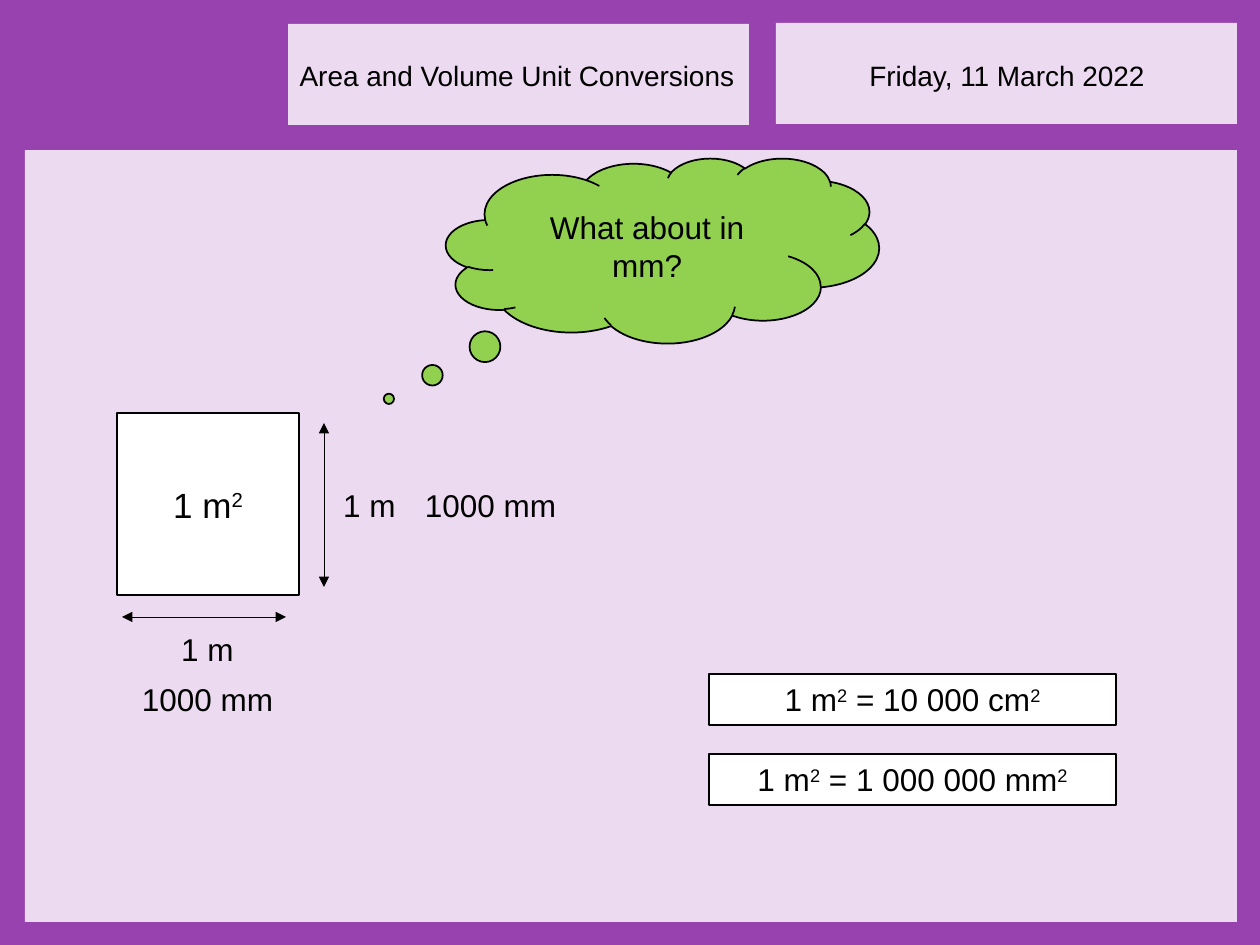
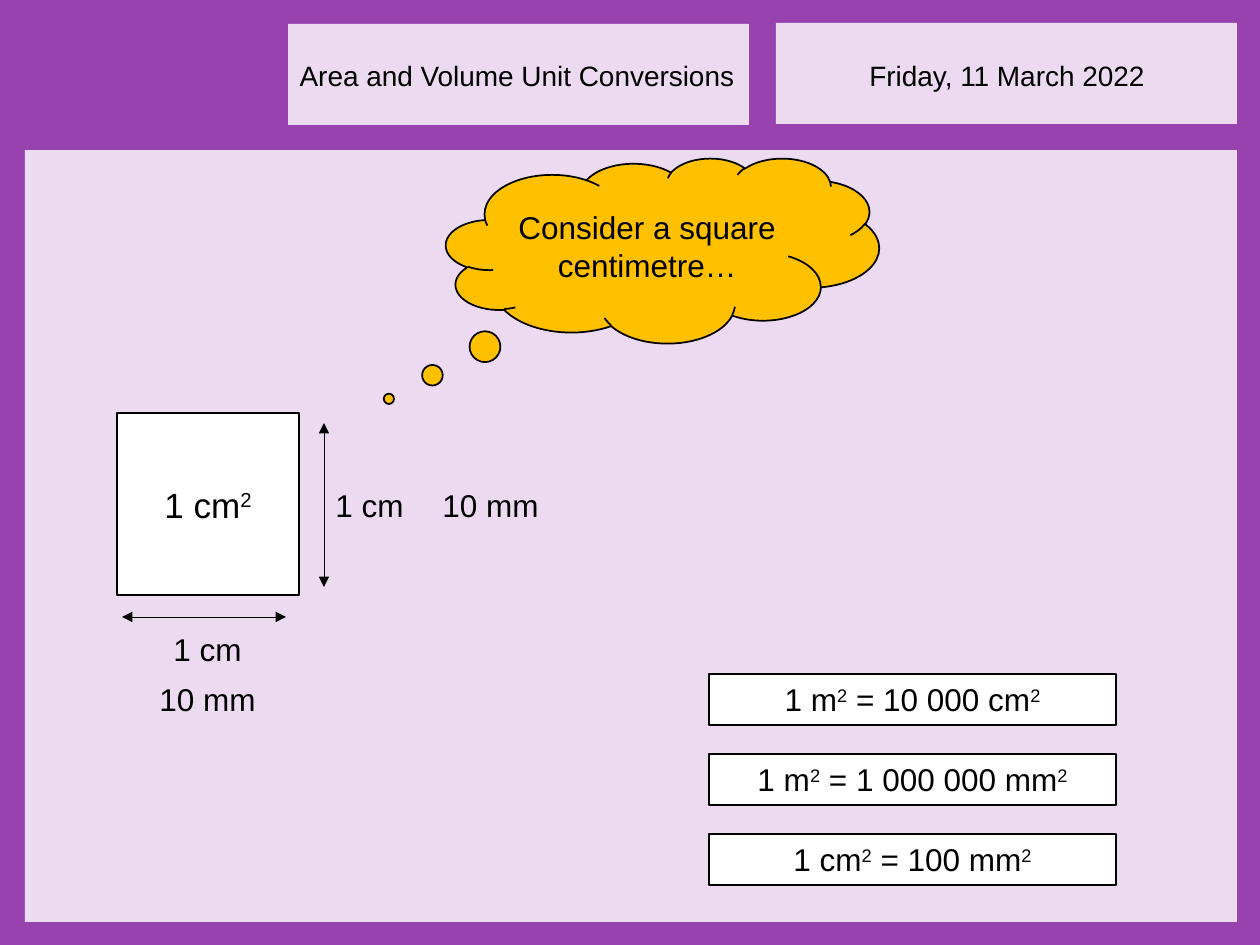
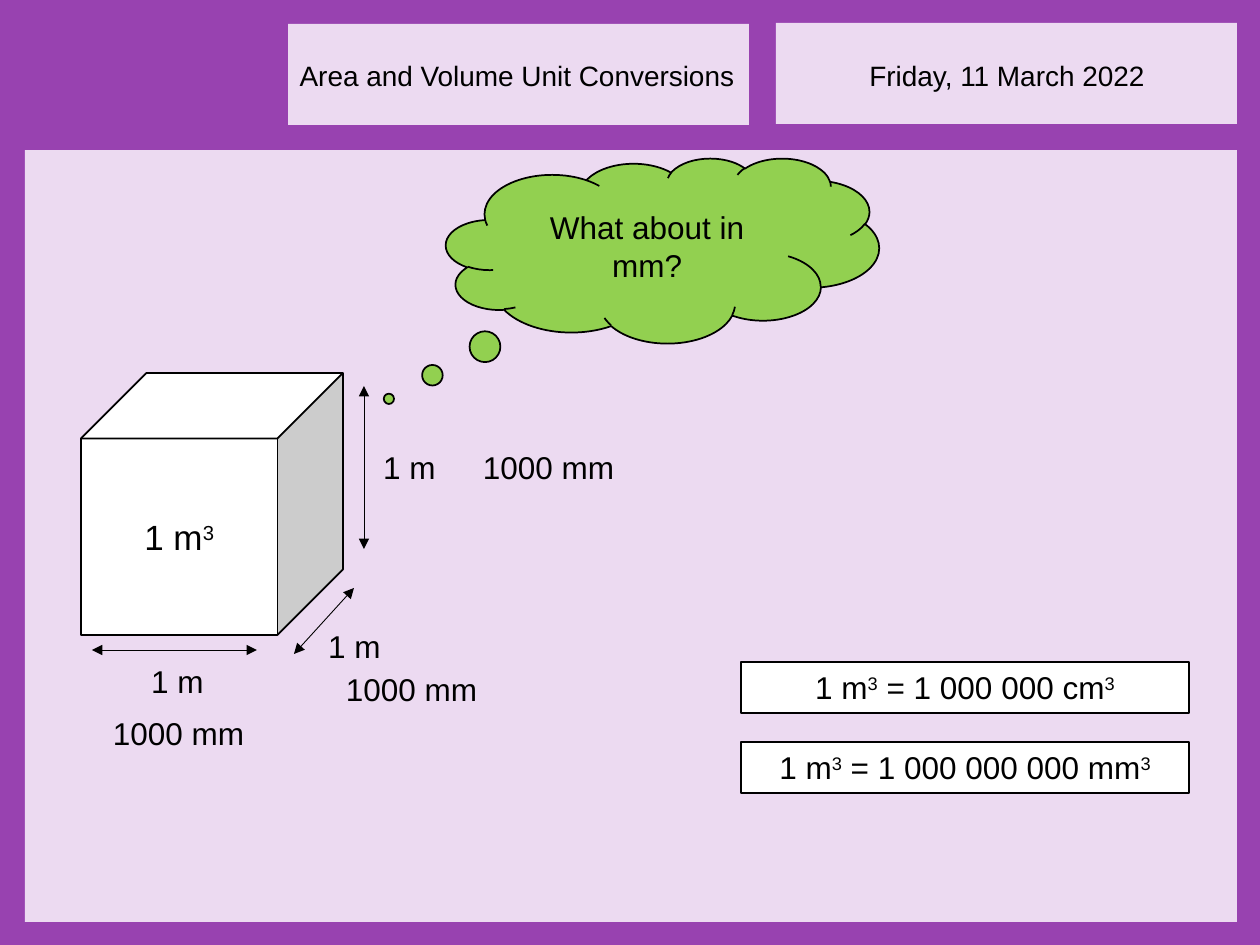
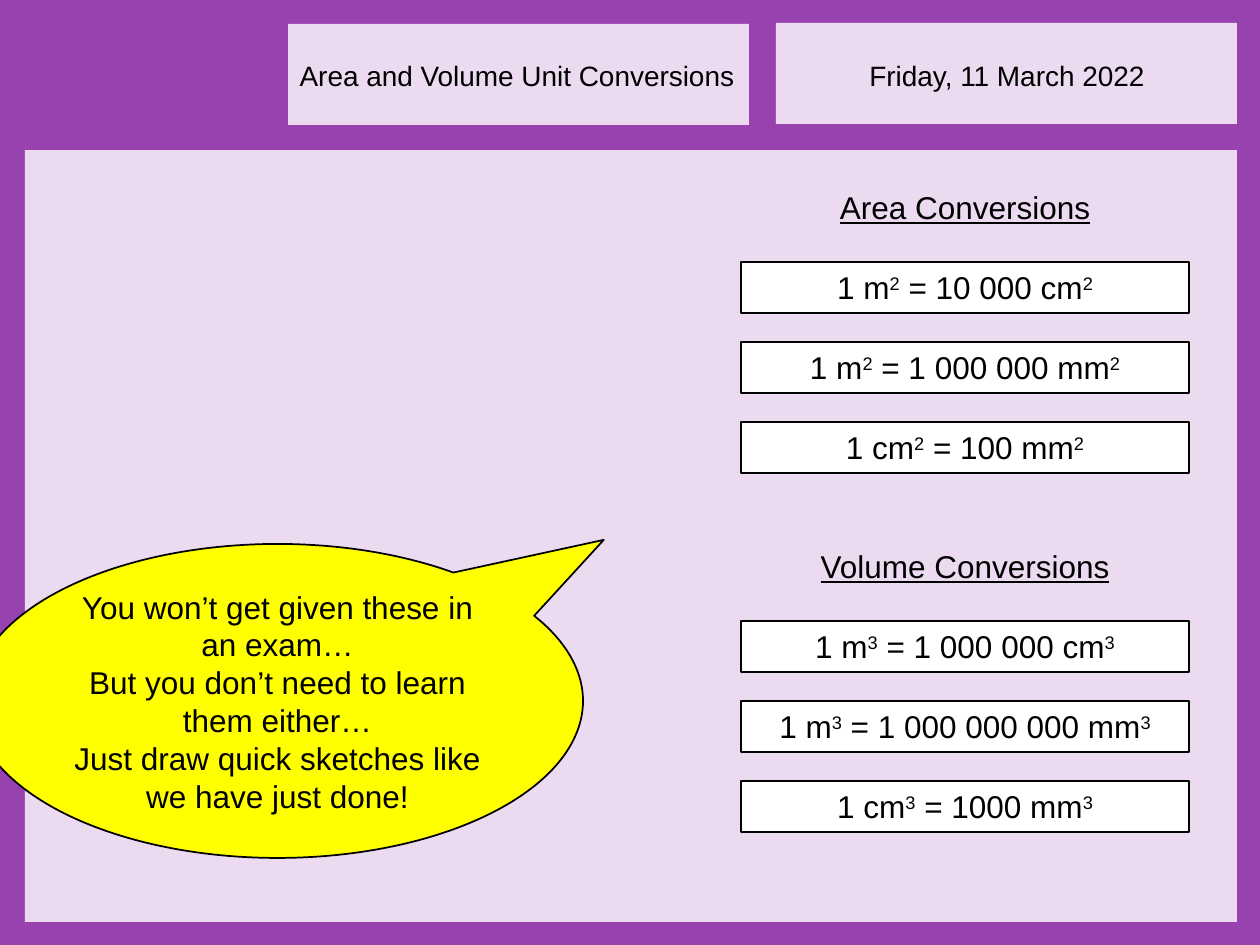
import pptx
import pptx.util
import pptx.dml.color
import pptx.enum.shapes
import pptx.enum.text
import pptx.oxml.ns
from lxml import etree

RGBColor = pptx.dml.color.RGBColor
MSO_SHAPE = pptx.enum.shapes.MSO_SHAPE
ANCHOR = pptx.enum.text.MSO_ANCHOR
qn = pptx.oxml.ns.qn

PURPLE = RGBColor(0x98, 0x42, 0xB0)
LILAC = RGBColor(0xEC, 0xDA, 0xF1)
GREEN = RGBColor(0x92, 0xD0, 0x50)
AMBER = RGBColor(0xFF, 0xC0, 0x00)
YELLOW = RGBColor(0xFF, 0xFF, 0x00)
WHITE = RGBColor(0xFF, 0xFF, 0xFF)
BLACK = RGBColor(0x00, 0x00, 0x00)

FONT = "Arial"
PX_PER_INCH = 126
SLIDE_SIZE = (1260, 945)

# A caret marks the next digit as a superscript.
AREA_FACTS = ["1 m^2 = 10 000 cm^2", "1 m^2 = 1 000 000 mm^2", "1 cm^2 = 100 mm^2"]
VOLUME_FACTS = ["1 m^3 = 1 000 000 cm^3", "1 m^3 = 1 000 000 000 mm^3", "1 cm^3 = 1000 mm^3"]

HEADERS = [
    ("Friday, 11 March 2022", (776, 23, 461, 101), (776, 52, 462, 47)),
    ("Area and Volume Unit Conversions", (288, 24, 461, 101), (286, 52, 462, 47)),
]
BODY_PANEL = (25, 150, 1212, 772)
CLOUD = (446, 158, 433, 185)
FACT_HEIGHT, FACT_STEP = 51, 80

# Each edge: arrow ends, label corner, corner of the label in mm.
SQUARE = {
    "kind": MSO_SHAPE.RECTANGLE, "box": (117, 413, 182, 182), "mm_width": 161,
    "edges": [((122, 617, 286, 617), (137, 624), (127, 674)),
              ((324, 423, 324, 587), (299, 480), (410, 480))],
}
CUBE = {
    "kind": MSO_SHAPE.CUBE, "box": (81, 373, 262, 262), "mm_width": 175,
    "edges": [((92, 650, 257, 650), (107, 656), (91, 708)),
              ((354, 588, 294, 654), (284, 621), (324, 664)),
              ((364, 386, 364, 549), (339, 442), (461, 442))],
}
LABEL_WIDTH = 141

SKETCHES = [
    {"thought": "What about in mm?", "colour": GREEN, "solid": SQUARE, "size": "1 m^2",
     "edge": "1 m", "edge_mm": "1000 mm", "facts": AREA_FACTS[:2], "column": (709, 674, 407)},
    {"thought": "Consider a square centimetre…", "colour": AMBER, "solid": SQUARE,
     "size": "1 cm^2", "edge": "1 cm", "edge_mm": "10 mm", "facts": AREA_FACTS,
     "column": (709, 674, 407)},
    {"thought": "What about in mm?", "colour": GREEN, "solid": CUBE, "size": "1 m^3",
     "edge": "1 m", "edge_mm": "1000 mm", "facts": VOLUME_FACTS[:2], "column": (741, 662, 448)},
]
SUMMARY = [("Area Conversions", AREA_FACTS, 182), ("Volume Conversions", VOLUME_FACTS, 541)]
SUMMARY_LEFT, SUMMARY_WIDTH = 741, 448
ADVICE = ["You won’t get given these in an exam…",
          "But you don’t need to learn them either…",
          "Just draw quick sketches like we have just done!"]
ADVICE_BOX = (-28, 544, 611, 314)


def px(*lengths):
    return [round(n * 914400 / PX_PER_INCH) for n in lengths]


def write(sp, paragraphs, size=18, grow=False, **font):
    """Fill a shape with centred text, raising each digit after a caret."""
    tf = sp.text_frame
    tf.word_wrap = True
    tf.vertical_anchor = ANCHOR.TOP if grow else ANCHOR.MIDDLE
    if grow:
        tf.auto_size = pptx.enum.text.MSO_AUTO_SIZE.SHAPE_TO_FIT_TEXT
    for i, text in enumerate(paragraphs):
        p = tf.paragraphs[0] if i == 0 else tf.add_paragraph()
        p.alignment = pptx.enum.text.PP_ALIGN.CENTER
        first, *rest = text.split("^")
        runs = [(first, False)]
        for part in rest:
            runs += [(part[0], True), (part[1:], False)]
        for words, raised in runs:
            if not words:
                continue
            r = p.add_run()
            r.text = words
            formats = {"name": FONT, "size": pptx.util.Pt(size), **font}
            for name, value in formats.items():
                setattr(r.font, name, value)
            r.font.color.rgb = BLACK
            if raised:
                r.font._element.set("baseline", "30000")


def add_shape(s, kind, box, fill, outlined=True):
    sp = s.shapes.add_shape(kind, *px(*box))
    sp.shadow.inherit = False
    sp.fill.solid()
    sp.fill.fore_color.rgb = fill
    if outlined:
        sp.line.color.rgb = BLACK
        sp.line.width = pptx.util.Pt(1)
    else:
        sp.line.fill.background()
    return sp


def add_label(s, box, text, **formats):
    sp = s.shapes.add_textbox(*px(*box))
    write(sp, [text], grow=True, **formats)
    return sp


def add_arrow(s, ends):
    line = s.shapes.add_connector(pptx.enum.shapes.MSO_CONNECTOR.STRAIGHT, *px(*ends))
    line.line.color.rgb = BLACK
    line.line.width = pptx.util.Pt(0.5)
    ln = line.line._get_or_add_ln()
    for end in ("a:headEnd", "a:tailEnd"):
        etree.SubElement(ln, qn(end)).set("type", "triangle")
    etree.SubElement(line.element.spPr, qn("a:effectLst"))


def add_callout(s, kind, box, fill, adjustments, paragraphs):
    sp = add_shape(s, kind, box, fill)
    for i, value in enumerate(adjustments):
        sp.adjustments[i] = value
    write(sp, paragraphs)


def add_facts(s, facts, left, top, width):
    for row, fact in enumerate(facts):
        box = (left, top + row * FACT_STEP, width, FACT_HEIGHT)
        write(add_shape(s, MSO_SHAPE.RECTANGLE, box, WHITE), [fact], grow=True)


def dress_layout(s, layout):
    """Draw the frame on a slide, then move it to the layout all slides share."""
    rect = MSO_SHAPE.RECTANGLE
    frame = [add_shape(s, rect, (0, 0, *SLIDE_SIZE), PURPLE, outlined=False)]
    for text, panel, label in HEADERS:
        frame.append(add_shape(s, rect, panel, LILAC, outlined=False))
        frame.append(add_label(s, label, text, size=16))
    frame.append(add_shape(s, rect, BODY_PANEL, LILAC, outlined=False))
    for holder in list(layout.placeholders):
        layout.shapes.element.remove(holder.element)
    for sp in frame:
        layout.shapes.element.append(sp.element)


def draw_sketch(s, sketch):
    solid = sketch["solid"]
    write(add_shape(s, solid["kind"], solid["box"], WHITE), [sketch["size"]], size=20)
    for ends, label, label_mm in solid["edges"]:
        add_arrow(s, ends)
        add_label(s, (*label, LABEL_WIDTH, FACT_HEIGHT), sketch["edge"])
        add_label(s, (*label_mm, solid["mm_width"], FACT_HEIGHT), sketch["edge_mm"])
    add_facts(s, sketch["facts"], *sketch["column"])
    add_callout(s, MSO_SHAPE.CLOUD_CALLOUT, CLOUD, sketch["colour"],
                (-0.632, 0.802), [sketch["thought"]])


def draw_summary(s):
    for heading, facts, top in SUMMARY:
        add_label(s, (SUMMARY_LEFT, top, SUMMARY_WIDTH, FACT_HEIGHT), heading, underline=True)
        add_facts(s, facts, SUMMARY_LEFT, top + FACT_STEP, SUMMARY_WIDTH)
    add_callout(s, MSO_SHAPE.OVAL_CALLOUT, ADVICE_BOX, YELLOW, (0.534, -0.513), ADVICE)


def main():
    prs = pptx.Presentation()
    prs.slide_width, prs.slide_height = px(*SLIDE_SIZE)
    layout = prs.slide_layouts[6]
    slides = [prs.slides.add_slide(layout) for _ in range(len(SKETCHES) + 1)]
    dress_layout(slides[0], layout)
    for s, sketch in zip(slides, SKETCHES):
        draw_sketch(s, sketch)
    draw_summary(slides[-1])
    prs.save("out.pptx")


if __name__ == "__main__":
    main()
